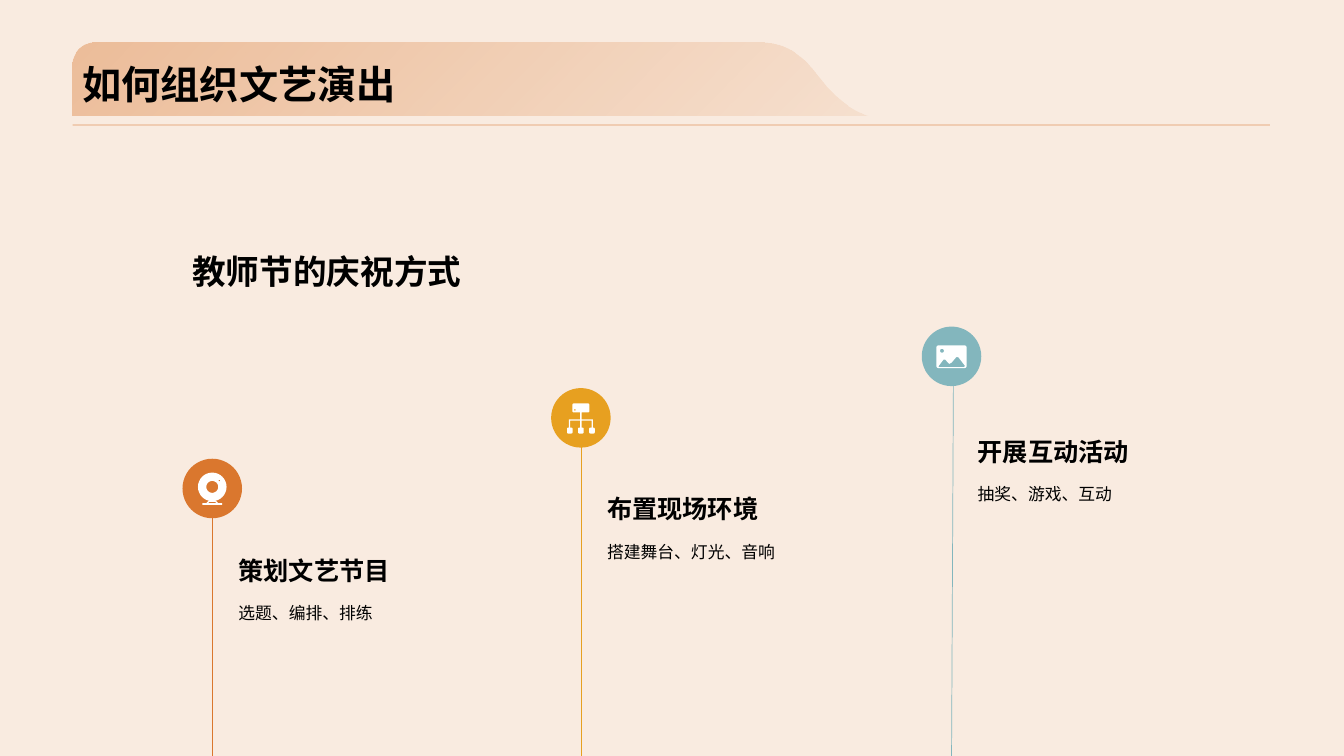
from math import cos, pi, sin

from lxml import etree
from pptx import Presentation
from pptx import util as u
from pptx.dml import color as col
from pptx.enum import shapes, text
from pptx.oxml import ns

HUES = {"back": "F9EBE0", "rust": "DA772E", "gold": "E7A020",
        "teal": "83B6BD", "ink": "000000", "white": "FFFFFF"}
HIGH = 19.05
DISC = 1.5

HEAD = {"size": u.Pt(28), "bold": True}
TOPIC = {"size": u.Pt(24), "bold": True}
LABEL = {"size": u.Pt(18), "bold": True}
BODY = {"size": u.Pt(12), "bold": False}


def hue(name):
    return col.RGBColor.from_string(HUES[name])


def fade(node, share):
    """Give every colour under node an opacity in percent."""
    for rgb in node.iter(ns.qn("a:srgbClr")):
        etree.SubElement(rgb, ns.qn("a:alpha"), val=str(share * 1000))


def curve(a, b, c, d, steps=16):
    """Points on a cubic curve from a to d."""
    pts = []
    for i in range(steps + 1):
        t = i / steps
        ws = ((1 - t) ** 3, 3 * t * (1 - t) ** 2, 3 * t * t * (1 - t), t ** 3)
        pts.append(tuple(sum(w * p[k] for w, p in zip(ws, (a, b, c, d)))
                         for k in (0, 1)))
    return pts


def box(x, y, w, h, r):
    """Outline of a rounded box centred on x, y."""
    pts = []
    for turn, (sx, sy) in enumerate(((1, 1), (-1, 1), (-1, -1), (1, -1))):
        for i in range(9):
            ang = (turn + i / 8) * pi / 2
            pts.append((x + sx * (w / 2 - r) + r * cos(ang),
                        y + sy * (h / 2 - r) + r * sin(ang)))
    return pts


def ring(x, y, r):
    return box(x, y, 2 * r, 2 * r, r)


def camera():
    stand = [(-.1, .32), (-.15, .37), (-.25, .37), (-.25, .41),
             (.25, .41), (.25, .37), (.15, .37), (.1, .32)]
    gap = [(-.08, .34), (.08, .34), (.1, .37), (-.1, .37)]
    return [ring(0, -.04, .36), ring(0, -.04, .15), ring(.18, -.2, .02),
            stand, gap]


def tree():
    half = [(.02, -.13), (.02, .04), (.3, .04), (.3, .24),
            (.27, .24), (.27, .07), (.02, .07), (.02, .24)]
    comb = half + [(-x, y) for x, y in reversed(half)]
    nodes = [box(x, .32, .14, .15, .03) for x in (-.28, 0, .28)]
    return [box(0, -.25, .43, .23, .04), ring(-.15, -.2, .02), comb] + nodes


def photo():
    hills = [(-.33, .25), (-.2, .08), (-.16, .08), (-.06, .19), (0, .16),
             (.12, .02), (.17, .02), (.34, .24), (.32, .27), (-.32, .27)]
    return [box(0, .01, .76, .57, .05), ring(-.24, -.14, .05), hills]


def trace(slide, loops, x=0, y=0):
    """Draw closed loops as one outline; inner loops become holes."""
    pen = None
    for loop in loops:
        pts = [(u.Cm(x + px), u.Cm(y + py)) for px, py in loop]
        if pen is None:
            pen = slide.shapes.build_freeform(*pts[0])
        else:
            pen.move_to(*pts[0])
        pen.add_line_segments(pts[1:], close=True)
    shape = pen.convert_to_shape()
    shape.shadow.inherit = False
    shape.line.fill.background()
    return shape


def paint(shape, name):
    shape.fill.solid()
    shape.fill.fore_color.rgb = hue(name)


def rule(slide, start, end, name, width):
    ends = [u.Cm(v) for v in start + end]
    line = slide.shapes.add_connector(shapes.MSO_CONNECTOR.STRAIGHT, *ends)
    line.line.color.rgb = hue(name)
    line.line.width = u.Pt(width)
    etree.SubElement(line.line._get_or_add_ln().getparent(),
                     ns.qn("a:effectLst"))
    return line


def write(slide, words, place, style, low=True, space=1.0):
    area = slide.shapes.add_textbox(*[u.Cm(v) for v in place])
    frame = area.text_frame
    frame.word_wrap = True
    frame.vertical_anchor = (text.MSO_ANCHOR.BOTTOM if low
                             else text.MSO_ANCHOR.TOP)
    par = frame.paragraphs[0]
    par.line_spacing = space
    run = par.add_run()
    run.text = words
    run.font.name = "Arial"
    run.font.color.rgb = hue("ink")
    for key, val in style.items():
        setattr(run.font, key, val)


def banner(slide):
    edge = (curve((1.83, 1.65), (1.83, 1.32), (2.08, 1.07), (2.39, 1.07))
            + curve((19.2, 1.07), (19.58, 1.07), (19.97, 1.17), (20.45, 1.7))
            + curve((20.45, 1.7), (20.9, 2.26), (21.29, 2.72), (21.92, 2.9))
            + [(1.83, 2.9)])
    shape = trace(slide, [edge])
    shape.fill.gradient()
    shape.fill.gradient_angle = 315
    for stop, place, share in zip(shape.fill.gradient_stops, (0, 1), (40, 10)):
        stop.position = place
        stop.color.rgb = hue("rust")
        fade(stop._gs, share)
    line = rule(slide, (1.83, 3.15), (32, 3.15), "rust", 1)
    fade(line.line._get_or_add_ln(), 40)


def stage(slide, x, y, name, icon, label, body, top, lean=0):
    """A disc with an icon on a pole, and its two texts."""
    rule(slide, (x + lean, y), (x, HIGH), name, 0.5)
    place = [u.Cm(v) for v in (x - DISC / 2, y - DISC / 2, DISC, DISC)]
    disc = slide.shapes.add_shape(shapes.MSO_SHAPE.ROUNDED_RECTANGLE, *place)
    disc.adjustments[0] = 0.5
    disc.shadow.inherit = False
    disc.line.fill.background()
    paint(disc, name)
    paint(trace(slide, icon, x, y), "white")
    write(slide, body, (x + .41, top + 1.02, 4.9, .81), BODY, False, 1.2)
    write(slide, label, (x + .41, top, 4.9, .94), LABEL, True, 0.9)


def main():
    deck = Presentation()
    deck.slide_width, deck.slide_height = u.Cm(33.87), u.Cm(HIGH)
    slide = deck.slides.add_slide(deck.slide_layouts[6])
    paint(slide.background, "back")
    banner(slide)
    write(slide, "教师节的庆祝方式", (4.6, 6.2, 13.28, 1.27), TOPIC)
    stage(slide, 5.35, 12.31, "rust", camera(),
          "策划文艺节目", "选题、编排、排练", 13.94)
    stage(slide, 14.64, 10.53, "gold", tree(),
          "布置现场环境", "搭建舞台、灯光、音响", 12.4)
    stage(slide, 23.98, 8.98, "teal", photo(),
          "开展互动活动", "抽奖、游戏、互动", 10.95, 0.05)
    write(slide, "如何组织文艺演出", (1.83, 0, 30.18, 2.84), HEAD)
    deck.save("out.pptx")


if __name__ == "__main__":
    main()
